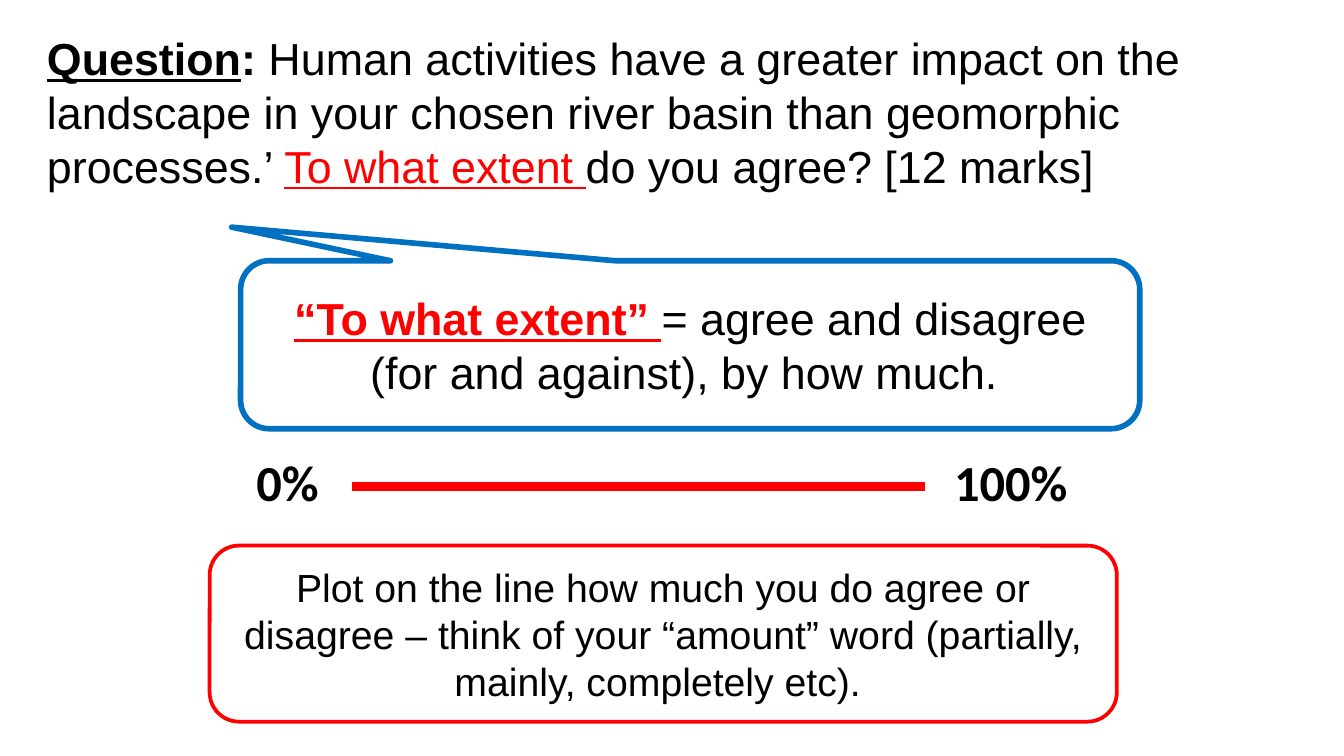
from dataclasses import dataclass
from lxml.etree import SubElement
from pptx import Presentation
from pptx.dml.color import RGBColor
from pptx.enum.shapes import MSO_CONNECTOR as CONNECTOR, MSO_SHAPE as SHAPE
from pptx.enum.text import MSO_ANCHOR as ANCHOR, PP_ALIGN as ALIGN
from pptx.oxml.ns import qn
from pptx.util import Inches, Pt


@dataclass(frozen=True)
class Theme:
    black: RGBColor = RGBColor(0, 0, 0)
    white: RGBColor = RGBColor(255, 255, 255)
    red: RGBColor = RGBColor(255, 0, 0)
    blue: RGBColor = RGBColor(0, 0x70, 0xC0)
    body: Pt = Pt(24)
    task: Pt = Pt(21)
    scale: Pt = Pt(27)


theme = Theme()


def write(frame, pieces, size, font="Arial", align=ALIGN.LEFT):
    frame.word_wrap = True
    paragraph = frame.paragraphs[0]
    paragraph.alignment = align
    for text, color, bold, underline in pieces:
        run = paragraph.add_run()
        run.text = text
        run.font.name = font
        run.font.size = size
        run.font.color.rgb = color
        run.font.bold = bold
        run.font.underline = underline


def add_panel(kind, box, color, width, pieces, size):
    panel = slide.shapes.add_shape(kind, *map(Inches, box))
    panel.shadow.inherit = False
    panel.fill.solid()
    panel.fill.fore_color.rgb = theme.white
    panel.line.color.rgb = color
    panel.line.width = Pt(width)
    panel.text_frame.vertical_anchor = ANCHOR.MIDDLE
    write(panel.text_frame, pieces, size, align=ALIGN.CENTER)
    return panel


deck = Presentation()
deck.slide_width = Inches(10)
deck.slide_height = Inches(10) * 9 // 16
slide = deck.slides.add_slide(deck.slide_layouts[6])

meaning = add_panel(
    SHAPE.ROUNDED_RECTANGULAR_CALLOUT, (1.79, 1.94, 6.69, 1.25), theme.blue, 3,
    [
        ("“To what extent” ", theme.red, True, True),
        ("= agree and disagree (for and against), by how much. ", theme.black, False, False),
    ],
    theme.body,
)
for index, value in enumerate((-0.51, -0.7, 0.17)):
    meaning.adjustments[index] = value

question = slide.shapes.add_textbox(Inches(0.28), Inches(0.14), Inches(9.53), Inches(1.38)).text_frame
question.vertical_anchor = ANCHOR.MIDDLE
question.margin_left = question.margin_right = Inches(0.07)
question.margin_top = question.margin_bottom = Inches(0.04)
write(
    question,
    [
        ("Question", theme.black, True, True),
        (": ", theme.black, True, False),
        (
            "Human activities have a greater impact on the landscape in your chosen "
            "river basin than geomorphic processes.’ ",
            theme.black, False, False,
        ),
        ("To what extent ", theme.red, False, True),
        ("do you agree? [12 marks]", theme.black, False, False),
    ],
    theme.body,
)

agreement = slide.shapes.add_connector(
    CONNECTOR.STRAIGHT, Inches(2.62), Inches(3.62), Inches(6.88), Inches(3.62)
)
agreement.line.color.rgb = theme.red
agreement.line.width = Pt(4.5)
SubElement(agreement._element.spPr, qn("a:effectLst"))

for label, left, width in (("0%", 1.81, 0.88), ("100%", 7, 1.19)):
    end = slide.shapes.add_textbox(Inches(left), Inches(3.31), Inches(width), Inches(0.56))
    write(end.text_frame, [(label, theme.black, True, False)], theme.scale, "Calibri")

add_panel(
    SHAPE.ROUNDED_RECTANGLE, (1.56, 4.06, 6.75, 1.31), theme.red, 2,
    [(
        "Plot on the line how much you do agree or disagree – think of your “amount” "
        "word (partially, mainly, completely etc). ",
        theme.black, False, False,
    )],
    theme.task,
)

deck.save("out.pptx")
